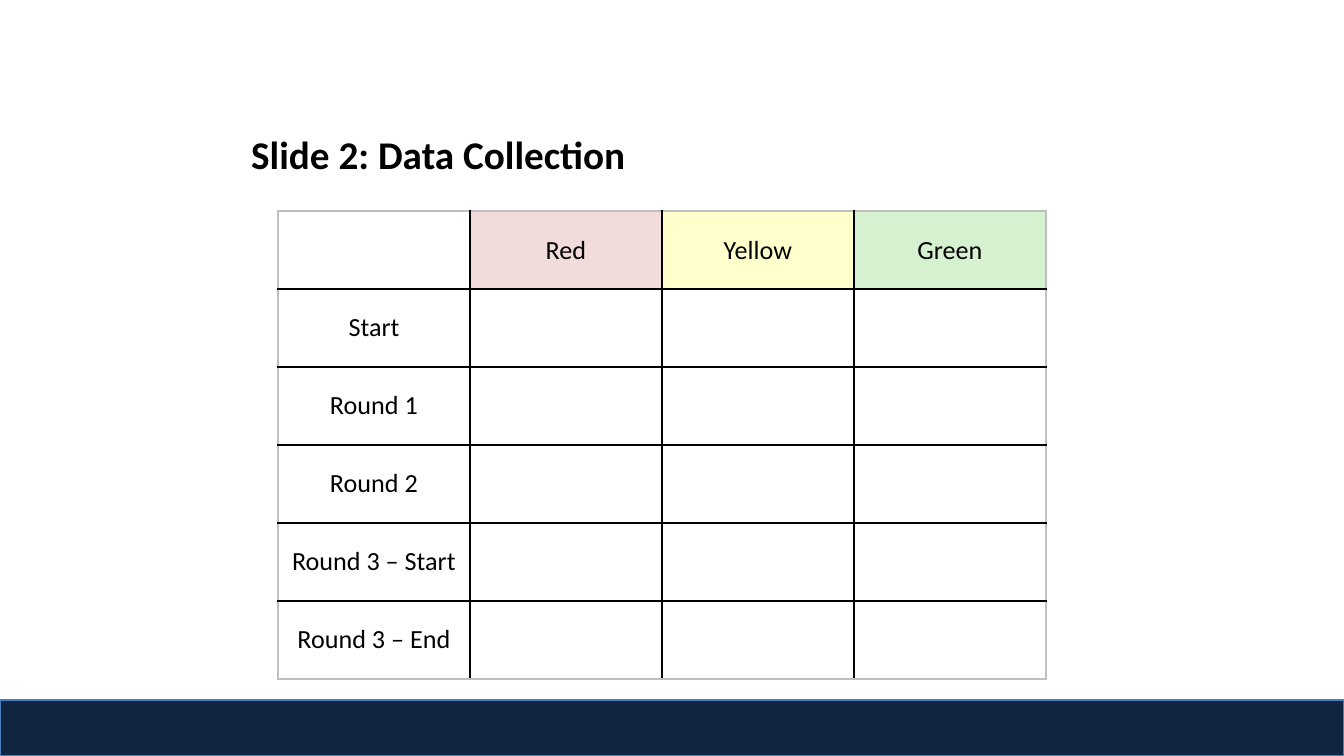
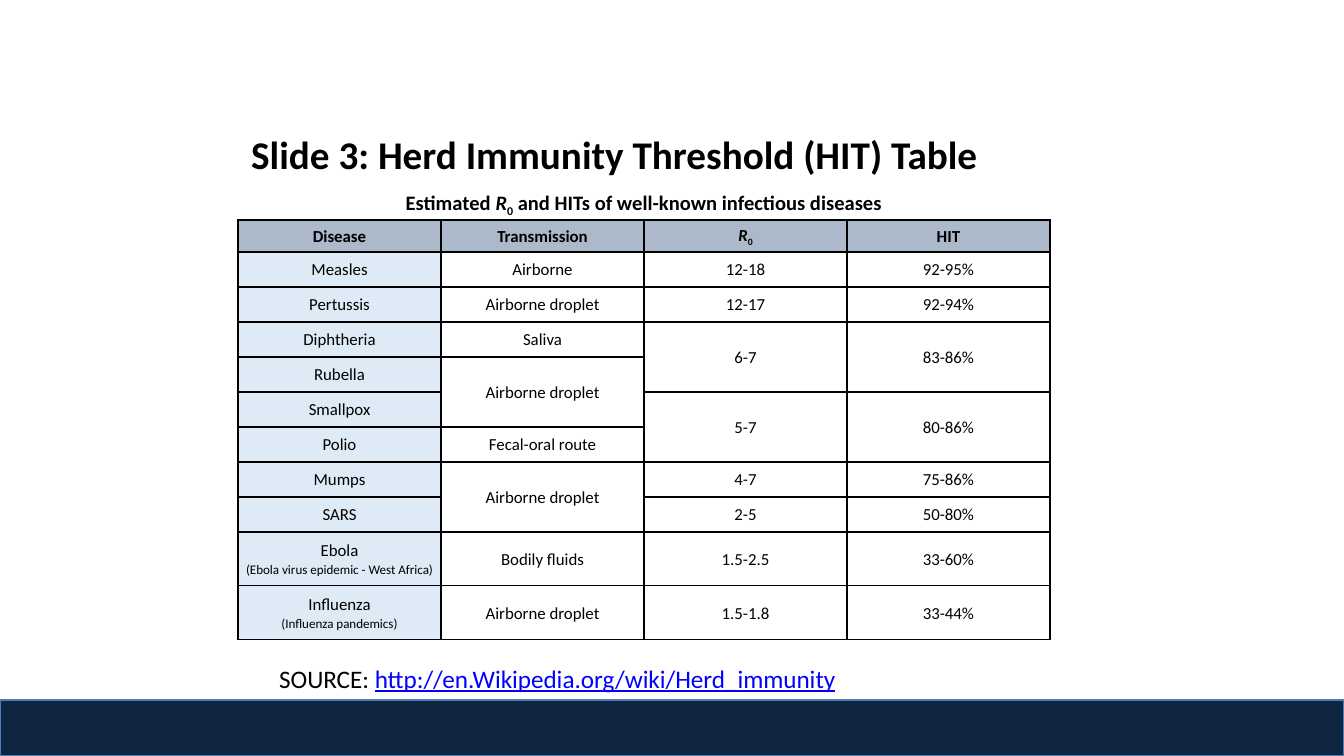
import pptx
import pptx.dml.color
import pptx.enum.shapes
import pptx.enum.text
import pptx.util
from lxml import etree
from pptx.oxml.ns import qn

RGBColor = pptx.dml.color.RGBColor
PP_ALIGN = pptx.enum.text.PP_ALIGN

PX = 914400 / 134.4
FONT = "Calibri"

BLACK = RGBColor(0x00, 0x00, 0x00)
WHITE = RGBColor(0xFF, 0xFF, 0xFF)
NAVY = RGBColor(0x10, 0x25, 0x3F)
BAND_EDGE = RGBColor(0x4B, 0x7E, 0xBC)
LINK_BLUE = RGBColor(0x00, 0x00, 0xFF)
FRAME_GREY = RGBColor(0xBF, 0xBF, 0xBF)
PALE_RED = RGBColor(0xF2, 0xDC, 0xDB)
PALE_YELLOW = RGBColor(0xFF, 0xFF, 0xCC)
PALE_GREEN = RGBColor(0xD6, 0xF1, 0xCF)
HEADER_BLUE = RGBColor(0xAC, 0xB9, 0xCA)
DISEASE_BLUE = RGBColor(0xDE, 0xEA, 0xF6)


def px(length):
    return pptx.util.Emu(round(length * PX))


class Deck:
    """Holds the shared style and the slide being built."""

    def __init__(self, width, height):
        self.presentation = pptx.Presentation()
        self.presentation.slide_width = px(width)
        self.presentation.slide_height = px(height)
        self.width, self.height = width, height
        self.slide = None

    def new_slide(self, title):
        blank = self.presentation.slide_layouts[6]
        self.slide = self.presentation.slides.add_slide(blank)
        self.band(top=700)
        self.text(238, 124, 860, 60, [(title, {"bold": True})], size=21)

    def band(self, top):
        band = self.slide.shapes.add_shape(
            pptx.enum.shapes.MSO_SHAPE.RECTANGLE,
            0, px(top), px(self.width), px(self.height - top))
        band.shadow.inherit = False
        band.fill.solid()
        band.fill.fore_color.rgb = NAVY
        band.line.color.rgb = BAND_EDGE
        band.line.width = pptx.util.Pt(0.75)

    def runs(self, paragraph, runs, size):
        """Each run is plain text or a pair of text and options."""
        for part in runs:
            text, options = (part, {}) if isinstance(part, str) else part
            run = paragraph.add_run()
            run.text = text
            run.font.name = FONT
            run.font.size = pptx.util.Pt(options.get("size", size))
            run.font.bold = options.get("bold", False)
            run.font.italic = options.get("italic", False)
            run.font.underline = options.get("underline", False)
            run.font.color.rgb = options.get("color", BLACK)
            if options.get("subscript"):
                run._r.get_or_add_rPr().set("baseline", "-25000")

    def text(self, left, top, width, height, runs, size):
        box = self.slide.shapes.add_textbox(
            px(left), px(top), px(width), px(height))
        box.text_frame.word_wrap = True
        self.runs(box.text_frame.paragraphs[0], runs, size)

    def edge(self, cell, side, color):
        line = etree.SubElement(
            cell._tc.get_or_add_tcPr(), qn(f"a:ln{side}"), w="12700")
        if color is None:
            etree.SubElement(line, qn("a:noFill"))
        else:
            fill = etree.SubElement(line, qn("a:solidFill"))
            etree.SubElement(fill, qn("a:srgbClr"), val=str(color))

    def table(self, left, top, column_width, row_heights, rows, size,
              insets, spacing, fill_of, edge_of, merges=()):
        """Each cell is a list of paragraphs, each a list of runs."""
        columns = len(rows[0])
        grid = self.slide.shapes.add_table(
            len(rows), columns, px(left), px(top),
            px(column_width * columns), px(sum(row_heights))).table
        grid.first_row = grid.horz_banding = False
        for column in grid.columns:
            column.width = px(column_width)
        for r, (row, height) in enumerate(zip(rows, row_heights)):
            grid.rows[r].height = px(height)
            for c, paragraphs in enumerate(row):
                cell = grid.cell(r, c)
                cell.margin_left = cell.margin_right = px(insets[0])
                cell.margin_top = cell.margin_bottom = px(insets[1])
                cell.vertical_anchor = pptx.enum.text.MSO_ANCHOR.MIDDLE
                for side in "LRTB":
                    self.edge(cell, side, edge_of(r, c, side))
                cell.fill.solid()
                cell.fill.fore_color.rgb = fill_of(r, c)
                frame = cell.text_frame
                for i, runs in enumerate(paragraphs):
                    line = frame.add_paragraph() if i else frame.paragraphs[0]
                    line.alignment = PP_ALIGN.CENTER
                    line.line_spacing = spacing
                    self.runs(line, runs, size)
        for first_row, first_column, last_row, last_column in merges:
            grid.cell(first_row, first_column).merge(
                grid.cell(last_row, last_column))


def plain(*texts):
    """A row of one-line cells; an empty text leaves its cell empty."""
    return [[[text]] if text else [] for text in texts]


def bold(text, **options):
    return text, {"bold": True, **options}


def data_collection(deck):
    deck.new_slide("Slide 2: Data Collection")
    stages = ["Start", "Round 1", "Round 2", "Round 3 – Start", "Round 3 – End"]
    rows = [plain("", "Red", "Yellow", "Green")]
    rows += [plain(stage, "", "", "") for stage in stages]
    header_fills = [WHITE, PALE_RED, PALE_YELLOW, PALE_GREEN]
    outer = {("L", 0), ("R", 3), ("T", 0), ("B", len(stages))}

    def edge_of(r, c, side):
        return FRAME_GREY if (side, c if side in "LR" else r) in outer else BLACK

    deck.table(278, 211, 192, [78] * len(rows), rows, size=14,
               insets=(10, 5), spacing=1.0, edge_of=edge_of,
               fill_of=lambda r, c: WHITE if r else header_fills[c])


def herd_immunity(deck):
    deck.new_slide("Slide 3: Herd Immunity Threshold (HIT) Table")

    # Source line
    address = ("http://en.Wikipedia.org/wiki/Herd_immunity",
               {"color": LINK_BLUE, "underline": True})
    deck.text(266, 657, 708, 44, ["SOURCE: ", address], size=13.5)

    # Caption and header rows
    def r_zero(**options):
        return [bold("R", italic=True, **options),
                bold("0", subscript=True, **options)]

    caption = [bold("Estimated ", size=11), *r_zero(size=11),
               bold(" and HITs of well-known infectious diseases", size=11)]
    header = [[[bold("Disease")]], [[bold("Transmission")]],
              [r_zero()], [[bold("HIT")]]]

    # Diseases; an empty text is covered by the merged cell above it
    diseases = [
        ("Measles", "Airborne", "12-18", "92-95%"),
        ("Pertussis", "Airborne droplet", "12-17", "92-94%"),
        ("Diphtheria", "Saliva", "6-7", "83-86%"),
        ("Rubella", "Airborne droplet", "", ""),
        ("Smallpox", "", "5-7", "80-86%"),
        ("Polio", "Fecal-oral route", "", ""),
        ("Mumps", "Airborne droplet", "4-7", "75-86%"),
        ("SARS", "", "2-5", "50-80%"),
        ("Ebola", "Bodily fluids", "1.5-2.5", "33-60%"),
        ("Influenza", "Airborne droplet", "1.5-1.8", "33-44%"),
    ]
    outbreaks = {"Ebola": "(Ebola virus epidemic - West Africa)",
                 "Influenza": "(Influenza pandemics)"}
    rows = [[[caption], [], [], []], header]
    merges = [(0, 0, 0, 3)]
    for disease in diseases:
        row = plain(*disease)
        if disease[0] in outbreaks:
            row[0].append([(outbreaks[disease[0]], {"size": 7})])
        merges += [(len(rows) - 1, c, len(rows), c)
                   for c, text in enumerate(disease) if not text]
        rows.append(row)

    def fill_of(r, c):
        if r == 1:
            return HEADER_BLUE
        return DISEASE_BLUE if r > 1 and c == 0 else WHITE

    deck.table(238, 188, 203, [32] * 2 + [35] * 8 + [54] * 2, rows, size=9,
               insets=(8, 0), spacing=1.07, fill_of=fill_of, merges=merges,
               edge_of=lambda r, c, side: BLACK if r or side == "B" else None)


def main():
    deck = Deck(1344, 756)
    data_collection(deck)
    herd_immunity(deck)
    deck.presentation.save("out.pptx")


if __name__ == "__main__":
    main()
